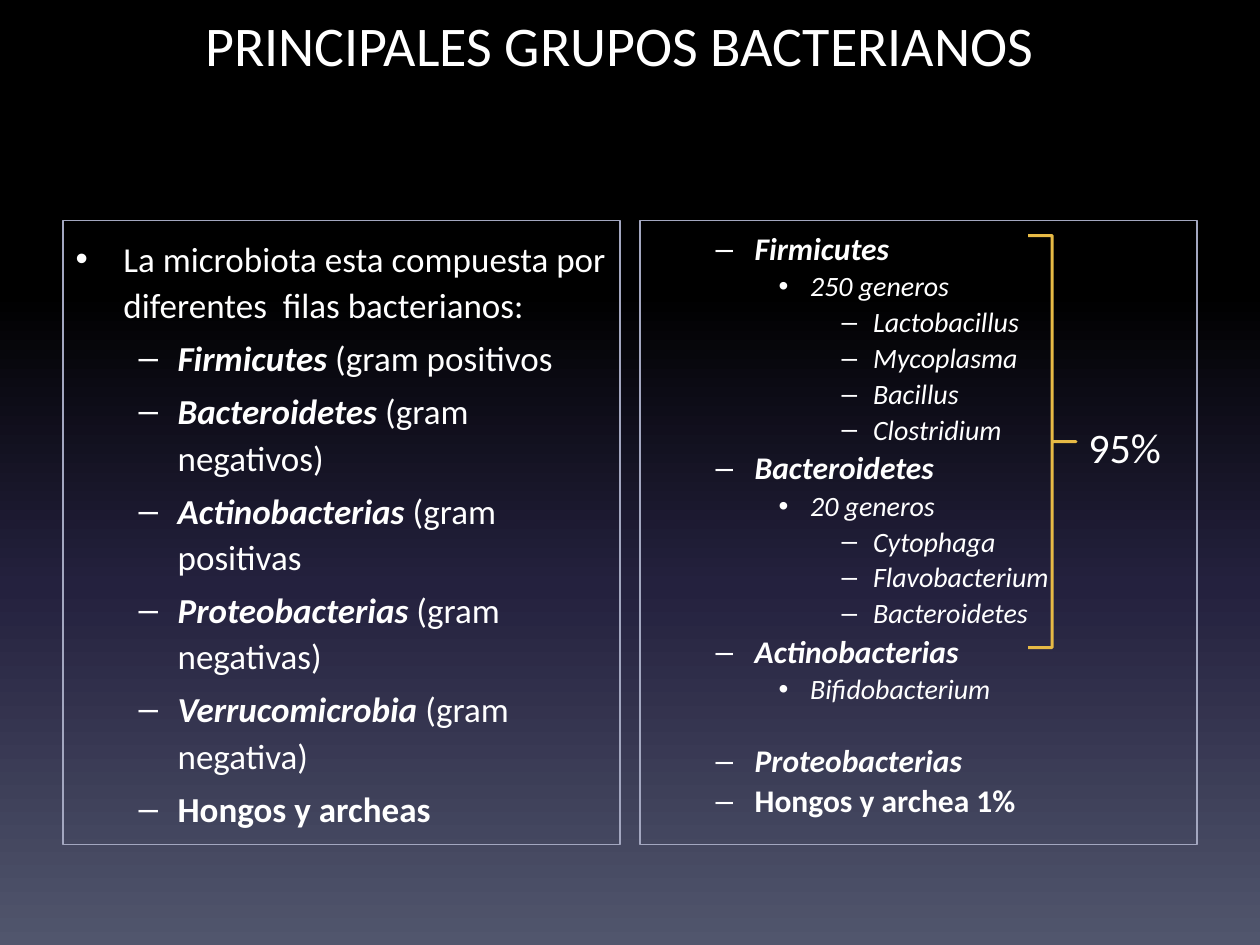
"""Build the slide about the main bacterial groups."""
from pptx import Presentation
from pptx.dml.color import RGBColor
from pptx.enum.shapes import MSO_SHAPE
from pptx.enum.text import MSO_ANCHOR, MSO_AUTO_SIZE, PP_ALIGN
from pptx.oxml.ns import qn
from pptx.util import Inches, Pt
from lxml.etree import SubElement

WHITE = RGBColor(0xFF, 0xFF, 0xFF)
BORDER = RGBColor(0xA3, 0xA7, 0xC0)
GOLD = RGBColor(0xE7, 0xBA, 0x45)
BLACK = RGBColor(0x00, 0x00, 0x00)
NAVY = RGBColor(0x24, 0x21, 0x3E)
SLATE = RGBColor(0x51, 0x56, 0x6D)
GRADIENT = [(0, BLACK), (31, BLACK), (62, NAVY), (100, SLATE)]
FONT = "Calibri"

INDENTS = [(0.38, 0.38), (0.81, 0.31), (1.25, 0.25), (1.75, 0.25)]
BULLETS = "•–•–"

PHYLA = [
    ("Firmicutes ", "(gram positivos"),
    ("Bacteroidetes ", "(gram negativos)"),
    ("Actinobacterias ", "(gram positivas"),
    ("Proteobacterias ", "(gram negativas)"),
    ("Verrucomicrobia ", "(gram negativa)"),
]
GENERA = [
    (1, "Firmicutes"),
    (2, "250 generos"),
    (3, "Lactobacillus"),
    (3, "Mycoplasma"),
    (3, "Bacillus"),
    (3, "Clostridium"),
    (1, "Bacteroidetes"),
    (2, "20 generos"),
    (3, "Cytophaga"),
    (3, "Flavobacterium"),
    (3, "Bacteroidetes"),
    (1, "Actinobacterias"),
    (2, "Bifidobacterium"),
    (1, "Proteobacterias"),
]


def add_run(paragraph, text, size, bold=False, italic=False):
    run = paragraph.add_run()
    run.text = text
    font = run.font
    font.name, font.size, font.bold, font.italic = FONT, Pt(size), bold, italic
    font.color.rgb = WHITE


def add_item(frame, level, size, spacing):
    first = frame.paragraphs[0]
    paragraph = frame.add_paragraph() if first.runs else first
    paragraph.level = level
    paragraph.line_spacing = spacing
    paragraph.space_before = Pt(size * 0.2)
    margin, hanging = INDENTS[level]
    properties = paragraph._p.get_or_add_pPr()
    properties.set("marL", str(Inches(margin)))
    properties.set("indent", str(-Inches(hanging)))
    SubElement(properties, qn("a:buChar"), char=BULLETS[level])
    return paragraph


presentation = Presentation()
presentation.slide_width = Inches(10)
presentation.slide_height = Inches(7.5)
slide = presentation.slides.add_slide(presentation.slide_layouts[3])

background = slide.background.fill
background.gradient()
background.gradient_angle = 270
stops = slide.element.find(".//" + qn("a:gsLst"))
for stop in list(stops):
    stops.remove(stop)
for position, color in GRADIENT:
    stop = SubElement(stops, qn("a:gs"), pos=str(position * 1000))
    SubElement(stop, qn("a:srgbClr"), val=str(color))

title, left_body, right_body = slide.placeholders
title.left, title.top = Inches(-0.02), Inches(0.03)
title.width, title.height = Inches(9.88), Inches(1.25)
title.text_frame.vertical_anchor = MSO_ANCHOR.TOP
heading = title.text_frame.paragraphs[0]
heading.alignment = PP_ALIGN.CENTER
add_run(heading, "PRINCIPALES GRUPOS BACTERIANOS", 32)

for body, left in ((left_body, 0.5), (right_body, 5.08)):
    body.left, body.top = Inches(left), Inches(1.75)
    body.width, body.height = Inches(4.42), Inches(4.95)
    body.line.color.rgb = BORDER
    body.line.width = Pt(0.75)
    body.text_frame.auto_size = MSO_AUTO_SIZE.NONE
    body.text_frame.vertical_anchor = MSO_ANCHOR.TOP
    body.text_frame.margin_top = Inches(0.1)

phyla_frame = left_body.text_frame
intro = add_item(phyla_frame, 0, 20, 1.1)
add_run(intro, "La microbiota esta compuesta por diferentes  filas bacterianos:", 20)
for phylum, gram in PHYLA:
    item = add_item(phyla_frame, 1, 20, 1.1)
    add_run(item, phylum, 20, bold=True, italic=True)
    add_run(item, gram, 20)
add_run(add_item(phyla_frame, 1, 20, 1.1), "Hongos y archeas", 20, bold=True)

genera_frame = right_body.text_frame
for level, name in GENERA:
    size = 18 if level == 1 else 16
    item = add_item(genera_frame, level, size, 0.9)
    add_run(item, name, size, bold=level == 1, italic=True)
item.space_before = Pt(22.5)
add_run(add_item(genera_frame, 1, 18, 0.9), "Hongos y archea 1%", 18, bold=True)

brace = slide.shapes.add_shape(
    MSO_SHAPE.RIGHT_BRACE, Inches(8.16), Inches(1.87), Inches(0.38), Inches(3.27)
)
brace.adjustments[0] = 0
brace.adjustments[1] = 0.5
brace.shadow.inherit = False
brace.fill.background()
brace.line.color.rgb = GOLD
brace.line.width = Pt(1.75)

share = slide.shapes.add_textbox(Inches(8.54), Inches(3.3), Inches(0.83), Inches(0.5))
share.text_frame.word_wrap = False
share.text_frame.auto_size = MSO_AUTO_SIZE.SHAPE_TO_FIT_TEXT
add_run(share.text_frame.paragraphs[0], "95%", 24)

presentation.save("out.pptx")
